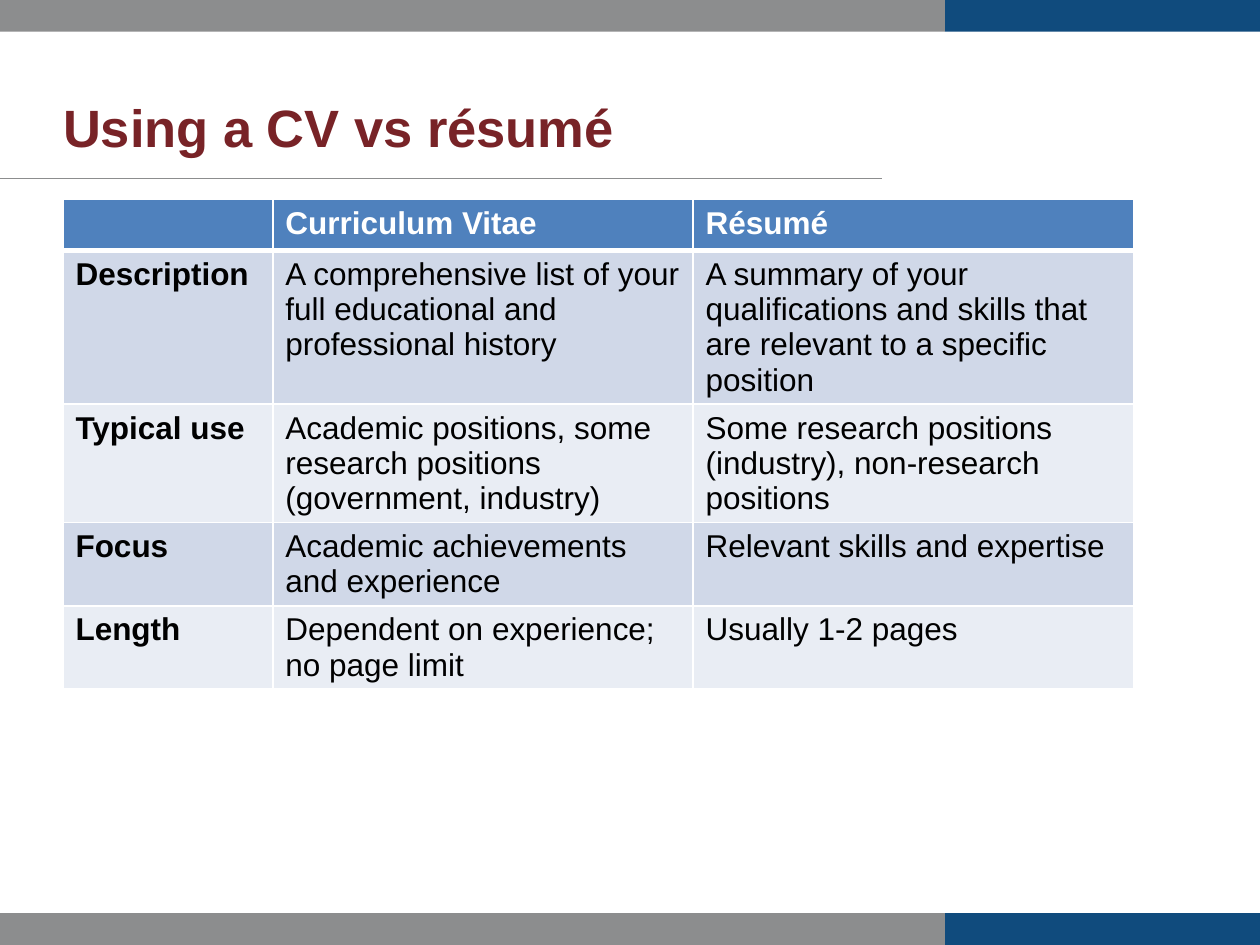
from dataclasses import dataclass

import lxml.etree
import pptx
import pptx.dml.color
import pptx.enum.shapes
import pptx.enum.text
import pptx.oxml.ns
import pptx.util

Cm = pptx.util.Cm
Pt = pptx.util.Pt
qn = pptx.oxml.ns.qn

FONT = "Arial"
HUES = {
    "gray": "8C8D8E",
    "navy": "104B7D",
    "maroon": "782327",
    "head": "4F81BD",
    "dark": "D0D8E8",
    "light": "E9EDF4",
    "white": "FFFFFF",
    "black": "000000",
}
WIDE, HIGH = 25.4, 19.05
SPLIT, THICK = 19.05, 0.64  # where the bars change hue, and their height
LEFT = 1.27
COLS = [4.23, 8.47, 8.89]
ROW = 1.03
ROWS = [
    ["", "Curriculum Vitae", "Résumé"],
    ["Description",
     "A comprehensive list of your full educational and professional history",
     "A summary of your qualifications and skills that are relevant to a specific position"],
    ["Typical use",
     "Academic positions, some research positions (government, industry)",
     "Some research positions (industry), non-research positions"],
    ["Focus", "Academic achievements and experience", "Relevant skills and expertise"],
    ["Length", "Dependent on experience; no page limit", "Usually 1-2 pages"],
]


@dataclass
class Bar:
    left: float
    top: float
    width: float
    hue: str


@dataclass
class Style:
    size: float
    hue: str
    bold: bool


def rgb(hue: str) -> pptx.dml.color.RGBColor:
    return pptx.dml.color.RGBColor.from_string(HUES[hue])


def write(frame, text: str, style: Style) -> None:
    frame.text = text
    para = frame.paragraphs[0]
    for item in [para, *para.runs]:
        font = item.font
        font.name = FONT
        font.size = Pt(style.size)
        font.bold = style.bold
        font.color.rgb = rgb(style.hue)


def draw_bar(slide, bar: Bar) -> None:
    shape = slide.shapes.add_shape(
        pptx.enum.shapes.MSO_SHAPE.RECTANGLE,
        Cm(bar.left), Cm(bar.top), Cm(bar.width), Cm(THICK))
    shape.shadow.inherit = False
    shape.fill.solid()
    shape.fill.fore_color.rgb = rgb(bar.hue)
    shape.line.fill.background()


def draw_rule(slide) -> None:
    rule = slide.shapes.add_connector(
        pptx.enum.shapes.MSO_CONNECTOR.STRAIGHT, 0, Cm(3.6), Cm(17.78), Cm(3.6))
    rule.line.color.rgb = rgb("gray")
    rule.line.width = Pt(0.75)
    lxml.etree.SubElement(rule._element.spPr, qn("a:effectLst"))


def draw_title(slide) -> None:
    title = slide.shapes.title
    title.left, title.top = Cm(LEFT), Cm(1.91)
    title.width, title.height = Cm(14.81), Cm(1.27)
    frame = title.text_frame
    frame.margin_left = frame.margin_right = 0
    frame.margin_top = frame.margin_bottom = 0
    frame.word_wrap = True
    frame.vertical_anchor = pptx.enum.text.MSO_ANCHOR.MIDDLE
    write(frame, "Using a CV vs résumé", Style(30, "maroon", True))
    frame.paragraphs[0].alignment = pptx.enum.text.PP_ALIGN.LEFT


def edge(cell, side: str, width: float) -> None:
    line = lxml.etree.SubElement(
        cell._tc.get_or_add_tcPr(), qn("a:ln" + side), w=str(Pt(width)))
    fill = lxml.etree.SubElement(line, qn("a:solidFill"))
    lxml.etree.SubElement(fill, qn("a:srgbClr"), val=HUES["white"])


def draw_table(slide) -> None:
    table = slide.shapes.add_table(
        len(ROWS), len(COLS), Cm(LEFT), Cm(4.02),
        Cm(sum(COLS)), Cm(ROW * len(ROWS))).table
    for col, width in zip(table.columns, COLS):
        col.width = Cm(width)
    for i, texts in enumerate(ROWS):
        table.rows[i].height = Cm(ROW)
        band = "head" if i == 0 else "dark" if i % 2 else "light"
        for j, text in enumerate(texts):
            cell = table.cell(i, j)
            # Edges come before the fill in the cell's properties
            for side in "LRTB":
                thick = (side, i) in (("B", 0), ("T", 1))
                edge(cell, side, 3 if thick else 1)
            cell.fill.solid()
            cell.fill.fore_color.rgb = rgb(band)
            hue = "black" if i else "white"
            write(cell.text_frame, text, Style(18, hue, i == 0 or j == 0))


def main() -> None:
    deck = pptx.Presentation()
    deck.slide_width, deck.slide_height = Cm(WIDE), Cm(HIGH)
    slide = deck.slides.add_slide(deck.slide_layouts[5])

    # Frame of the page
    draw_rule(slide)
    for top in (0, HIGH - THICK):
        draw_bar(slide, Bar(SPLIT, top, WIDE - SPLIT, "navy"))
        draw_bar(slide, Bar(0, top, SPLIT, "gray"))

    # Content
    draw_title(slide)
    draw_table(slide)
    deck.save("out.pptx")


if __name__ == "__main__":
    main()
